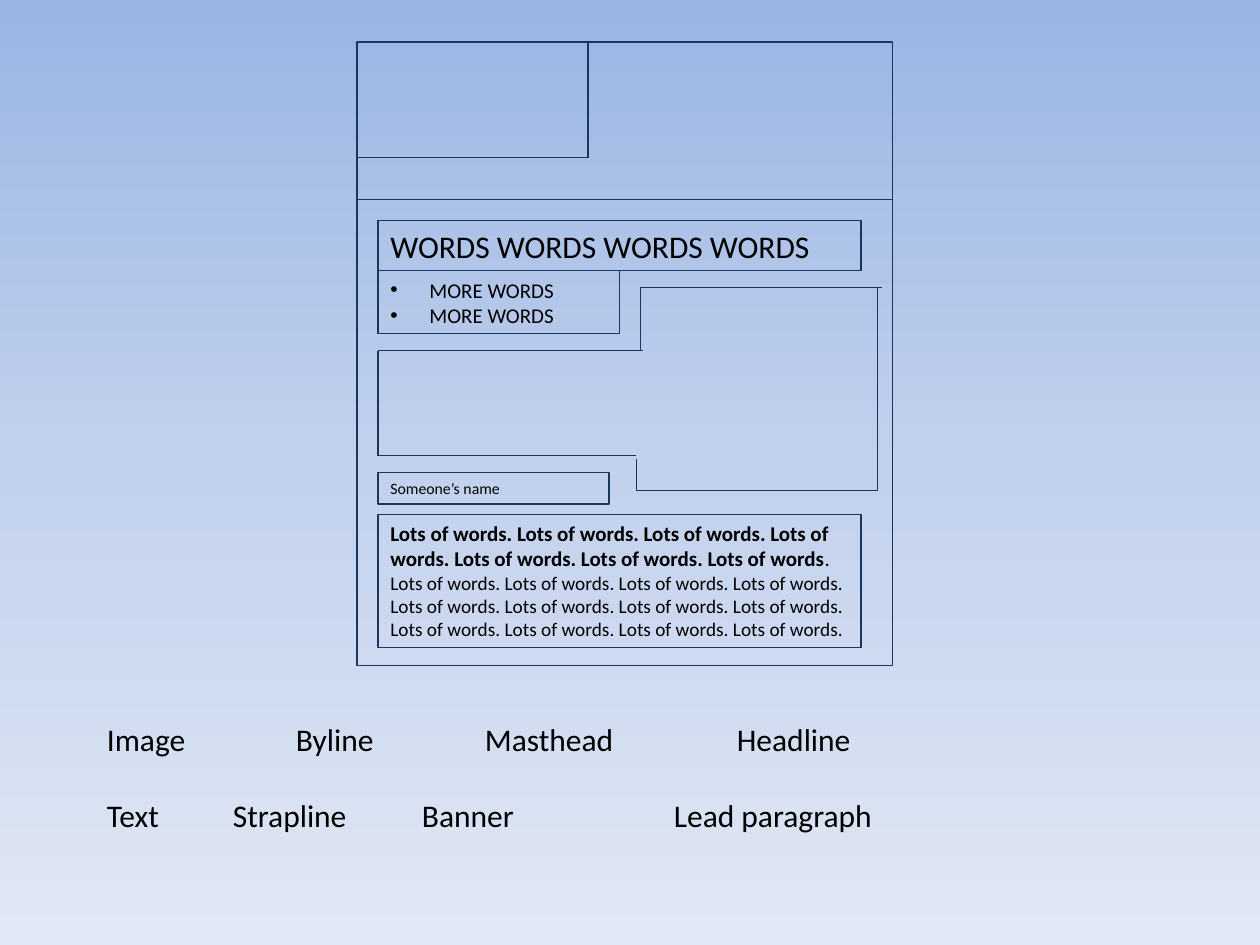
import copy

import pptx
import pptx.dml.color
import pptx.enum.shapes
import pptx.enum.text
import pptx.oxml.xmlchemy
import pptx.util

BLACK = pptx.dml.color.RGBColor(0x00, 0x00, 0x00)
NAVY = pptx.dml.color.RGBColor(0x17, 0x37, 0x5E)
SKY_TOP = pptx.dml.color.RGBColor(0x9A, 0xB5, 0xE4)
SKY_MIDDLE = pptx.dml.color.RGBColor(0xC2, 0xD1, 0xED)
SKY_BOTTOM = pptx.dml.color.RGBColor(0xE1, 0xE8, 0xF5)

presentation = pptx.Presentation()
presentation.slide_width = pptx.util.Inches(10)
presentation.slide_height = pptx.util.Inches(7.5)
slide = presentation.slides.add_slide(presentation.slide_layouts[6])

# The slide is a grid of 120 columns by 90 rows of square cells.
CELL = presentation.slide_width / 120


def grid(*cells):
    """Turn counts of grid cells into slide lengths."""
    return [pptx.util.Emu(round(count * CELL)) for count in cells]


def write_paragraphs(shape, paragraphs):
    """Fill a shape with paragraphs, each a list of (text, size, bold) runs."""
    frame = shape.text_frame
    frame.word_wrap = True
    frame.auto_size = pptx.enum.text.MSO_AUTO_SIZE.SHAPE_TO_FIT_TEXT
    frame.vertical_anchor = pptx.enum.text.MSO_ANCHOR.TOP
    for index, runs in enumerate(paragraphs):
        paragraph = frame.add_paragraph() if index else frame.paragraphs[0]
        paragraph.alignment = pptx.enum.text.PP_ALIGN.LEFT
        for text, size, bold in runs:
            run = paragraph.add_run()
            run.text = text
            run.font.name = "Calibri"
            run.font.size = pptx.util.Pt(size)
            run.font.bold = bold
            run.font.color.rgb = BLACK


# Background gradient, top to bottom
fill = slide.background.fill
fill.gradient()
fill.gradient_angle = 270
stop_list = slide.element.xpath(".//a:gsLst")[0]
stop_list.insert(1, copy.deepcopy(stop_list[0]))
for stop, position, color in zip(
    fill.gradient_stops, (0, 0.5, 1), (SKY_TOP, SKY_MIDDLE, SKY_BOTTOM)
):
    stop.position = position
    stop.color.rgb = color

# Boxes of the newspaper page: left, top, width, height, paragraphs
words = "Lots of words."
lead = " ".join([words] * 7).rstrip(".")
body = " ".join([words] * 12)
page_box = (34, 4, 51, 59.4, [])
headline_box = (36, 21, 46, 4.8, [[("WORDS WORDS WORDS WORDS", 18, False)]])
strapline_box = (36, 25.8, 23, 6, [[("MORE WORDS", 12, False)]] * 2)
text_box = (36, 49, 46, 12.7, [
    [(lead, 12, True), (".", 12, False)],
    [(body, 11, False)],
])
byline_box = (36, 45, 22, 3, [[("Someone’s name", 9, False)]])

for *place, paragraphs in (page_box, headline_box, strapline_box, text_box, byline_box):
    box = slide.shapes.add_shape(pptx.enum.shapes.MSO_SHAPE.RECTANGLE, *grid(*place))
    box.shadow.inherit = False
    box.fill.background()
    box.line.color.rgb = NAVY
    box.line.width = pptx.util.Pt(0.75)
    if paragraphs:
        write_paragraphs(box, paragraphs)
    if paragraphs is strapline_box[-1]:
        for paragraph in box.text_frame.paragraphs:
            properties = paragraph._p.get_or_add_pPr()
            properties.set("marL", str(pptx.util.Inches(0.31)))
            properties.set("indent", str(-pptx.util.Inches(0.31)))
            for tag, name, value in (("buFont", "typeface", "Arial"), ("buChar", "char", "•")):
                bullet = pptx.oxml.xmlchemy.OxmlElement("a:" + tag)
                bullet.set(name, value)
                properties.append(bullet)

# Rules of the page: from column, row to column, row
masthead_rules = [
    (56, 4, 56, 15),
    (56, 15, 34, 15),
    (34, 19, 85, 19),
]
image_rules = [
    (61, 27.4, 84, 27.4),
    (60.6, 46.7, 83.6, 46.7),
    (83.6, 27.4, 83.6, 46.7),
    (61, 27.4, 61, 33.4),
    (60.6, 43.7, 60.6, 46.7),
    (36, 43.4, 60.6, 43.4),
    (36, 33.4, 61.2, 33.4),
    (36, 33.4, 36, 43.4),
]
for ends in masthead_rules + image_rules:
    rule = slide.shapes.add_connector(
        pptx.enum.shapes.MSO_CONNECTOR.STRAIGHT, *grid(*ends)
    )
    rule.line.color.rgb = NAVY
    rule.line.width = pptx.util.Pt(0.75)
    rule._element.spPr.append(pptx.oxml.xmlchemy.OxmlElement("a:effectLst"))

# Terms to match with the parts of the page
terms = slide.shapes.add_textbox(*grid(9, 68, 106, 12.1))
write_paragraphs(terms, [
    [("Image\t\tByline\t\tMasthead\t\tHeadline", 18, False)],
    [("Text\t\tStrapline\t\tBanner\t\t\tLead paragraph", 18, False)],
])
terms.text_frame.paragraphs[1].space_before = pptx.util.Pt(22)

presentation.save("out.pptx")
